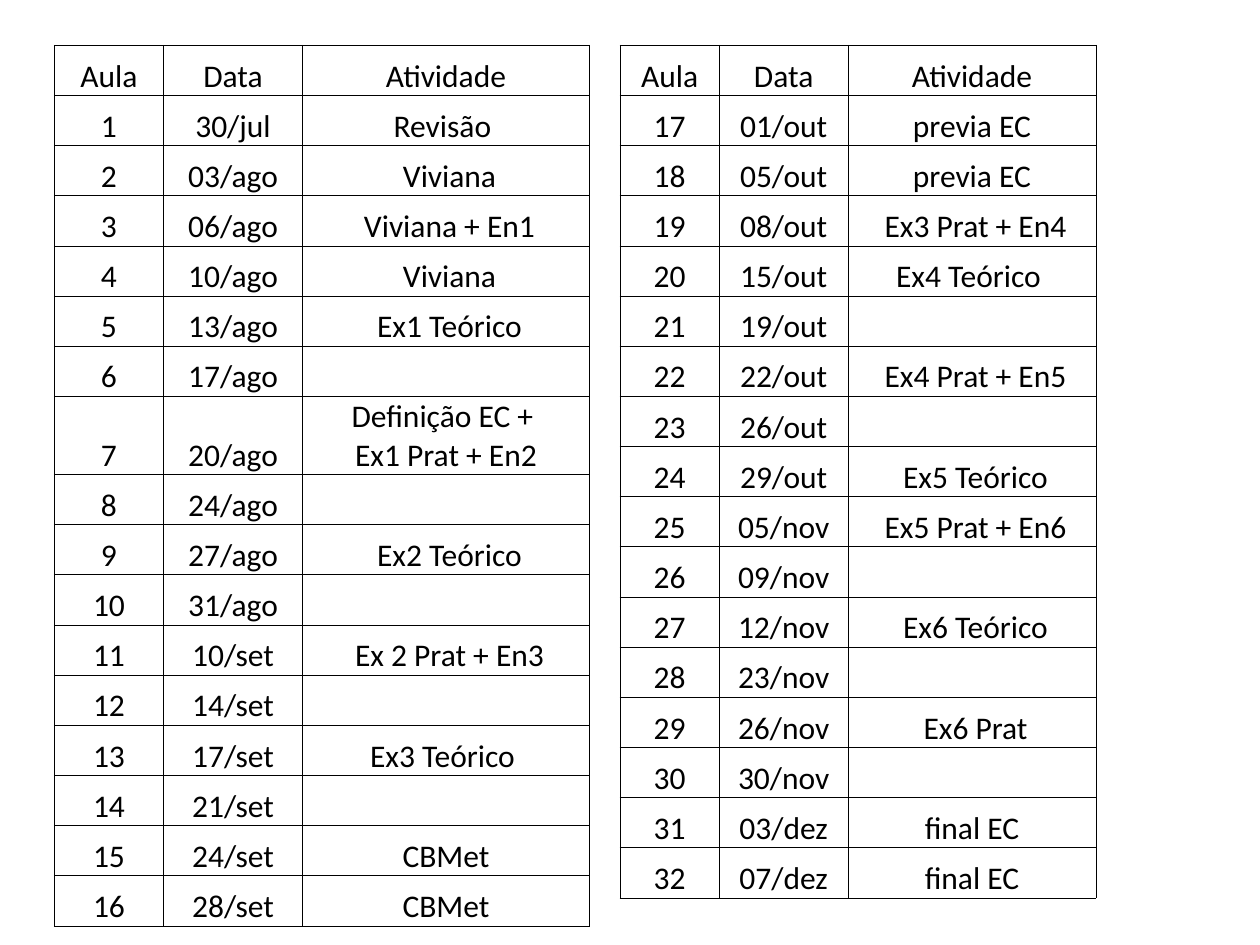
"""Build a one-slide course schedule made of two side-by-side tables."""
import dataclasses

import lxml.etree
import pptx
import pptx.dml.color
import pptx.enum.text
import pptx.oxml.ns
import pptx.util


@dataclasses.dataclass(frozen=True)
class Theme:
    """Colours, type and line sizes of the schedule."""
    ink: str = "000000"
    font: str = "Calibri"
    text_size: float = 18
    border_width: float = 0.5
    inset: float = 0.01


@dataclasses.dataclass(frozen=True)
class Box:
    """A rectangle in EMU."""
    left: int
    top: int
    width: int
    height: int


THEME = Theme()
HEADINGS = ("Aula", "Data", "Atividade")
FIRST_HALF = [
    ("30/jul", "Revisão "), ("03/ago", " Viviana"),
    ("06/ago", " Viviana + En1"), ("10/ago", " Viviana"),
    ("13/ago", " Ex1 Teórico"), ("17/ago", ""),
    ("20/ago", "Definição EC + \nEx1 Prat + En2"), ("24/ago", ""),
    ("27/ago", " Ex2 Teórico"), ("31/ago", ""),
    ("10/set", " Ex 2 Prat + En3"), ("14/set", ""),
    ("17/set", "Ex3 Teórico "), ("21/set", ""),
    ("24/set", "CBMet"), ("28/set", "CBMet"),
]
SECOND_HALF = [
    ("01/out", "previa EC"), ("05/out", "previa EC"),
    ("08/out", " Ex3 Prat + En4"), ("15/out", "Ex4 Teórico "),
    ("19/out", ""), ("22/out", " Ex4 Prat + En5"),
    ("26/out", ""), ("29/out", " Ex5 Teórico"),
    ("05/nov", " Ex5 Prat + En6"), ("09/nov", ""),
    ("12/nov", " Ex6 Teórico"), ("23/nov", ""),
    ("26/nov", " Ex6 Prat"), ("30/nov", ""),
    ("03/dez", "final EC"), ("07/dez", "final EC"),
]


def draw_borders(cell):
    """Give a cell a thin solid line on all four sides."""
    properties = cell._tc.get_or_add_tcPr()
    qualify = pptx.oxml.ns.qn
    for side in ("a:lnL", "a:lnR", "a:lnT", "a:lnB"):
        line = lxml.etree.SubElement(properties, qualify(side))
        line.set("w", str(pptx.util.Pt(THEME.border_width)))
        fill = lxml.etree.SubElement(line, qualify("a:solidFill"))
        lxml.etree.SubElement(fill, qualify("a:srgbClr")).set("val", THEME.ink)


def fill_cell(cell, text):
    """Format a cell and write its text, one paragraph per line."""
    draw_borders(cell)
    cell.fill.background()
    cell.vertical_anchor = pptx.enum.text.MSO_ANCHOR.BOTTOM
    inset = pptx.util.Inches(THEME.inset)
    cell.margin_left = cell.margin_right = cell.margin_top = inset
    cell.margin_bottom = 0
    frame = cell.text_frame
    for index, line in enumerate(text.split("\n")):
        para = frame.add_paragraph() if index else frame.paragraphs[0]
        para.alignment = pptx.enum.text.PP_ALIGN.CENTER
        if line:
            span = para.add_run()
            span.text = line
            span.font.name = THEME.font
            span.font.size = pptx.util.Pt(THEME.text_size)
            span.font.color.rgb = pptx.dml.color.RGBColor.from_string(THEME.ink)


def add_schedule(page, box, column_weights, first_lesson, lessons):
    """Place a table of numbered lessons inside the box."""
    rows = [HEADINGS] + [
        (str(number), date, activity)
        for number, (date, activity) in enumerate(lessons, first_lesson)
    ]
    table = page.shapes.add_table(
        len(rows), len(HEADINGS), box.left, box.top, box.width, box.height
    ).table
    table.first_row = table.horz_banding = False
    for column, weight in zip(table.columns, column_weights):
        column.width = round(box.width * weight / sum(column_weights))
    for row, texts in zip(table.rows, rows):
        row.height = round(box.height / len(rows))
        for cell, text in zip(row.cells, texts):
            fill_cell(cell, text)


def main():
    """Build and save the deck."""
    deck = pptx.Presentation()
    deck.slide_width = pptx.util.Inches(10)
    deck.slide_height = pptx.util.Inches(7.5)
    page = deck.slides.add_slide(deck.slide_layouts[6])
    top, height = round(deck.slide_height * 0.048), pptx.util.Inches(6.77)
    first_lesson = 1
    for left, weights, lessons in (
        (0.043, (87, 110, 228), FIRST_HALF),
        (0.492, (79, 102, 197), SECOND_HALF),
    ):
        width = deck.slide_width * sum(weights) / 1000
        box = Box(round(deck.slide_width * left), top, round(width), height)
        add_schedule(page, box, weights, first_lesson, lessons)
        first_lesson += len(lessons)
    deck.save("out.pptx")


if __name__ == "__main__":
    main()
